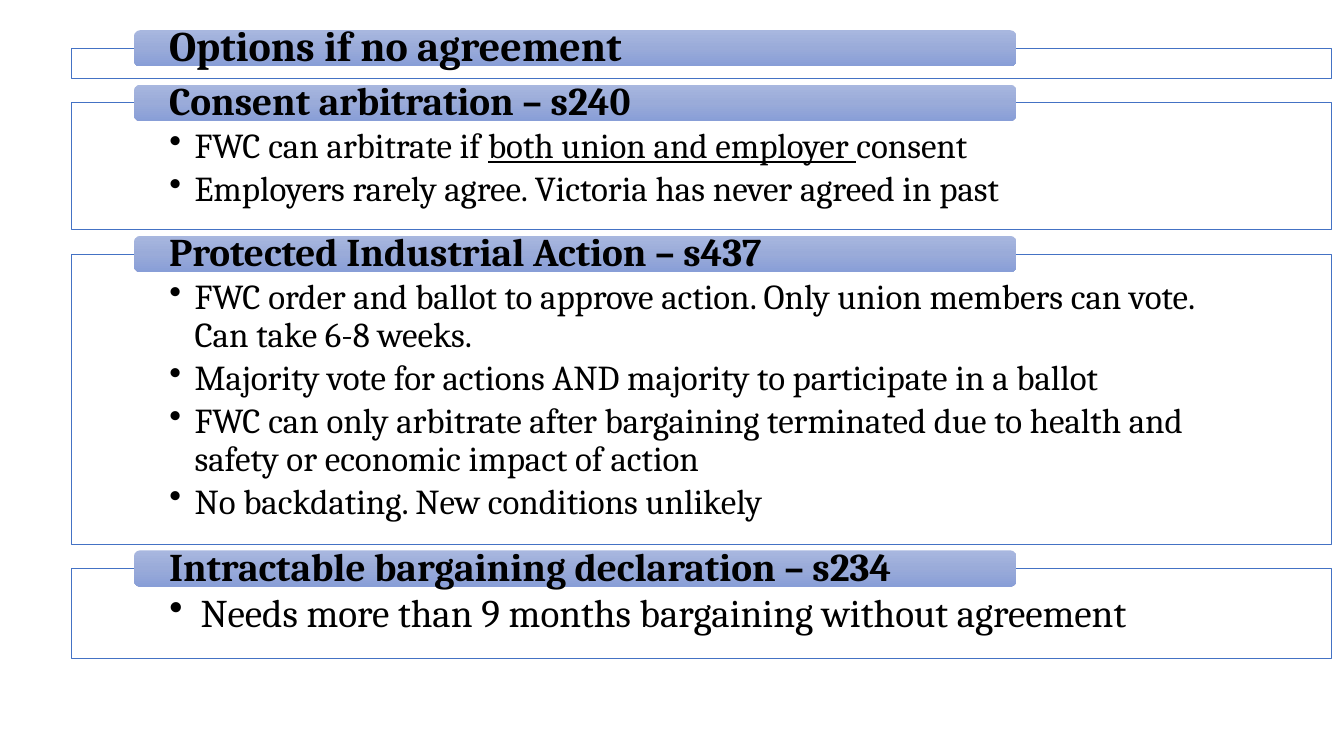
"""Build a slide that lists the options if bargaining reaches no agreement."""
from copy import deepcopy
from dataclasses import dataclass

from lxml import etree
from pptx import Presentation
from pptx.dml.color import RGBColor
from pptx.enum.shapes import MSO_SHAPE
from pptx.enum.text import MSO_ANCHOR, PP_ALIGN
from pptx.oxml.ns import qn
from pptx.util import Inches, Pt

RECTANGLE = MSO_SHAPE.RECTANGLE
ROUNDED = MSO_SHAPE.ROUNDED_RECTANGLE
TOP, MIDDLE = MSO_ANCHOR.TOP, MSO_ANCHOR.MIDDLE
LEFT = PP_ALIGN.LEFT

COLORS = {
    "panel": "FFFFFF",
    "outline": "4472C4",
    "tab_top": "A8B7DF",
    "tab_middle": "9AABD9",
    "tab_bottom": "889ED7",
    "text": "000000",
}
FONT = "Cambria"
FIRST_TOP, GAP = 0.48, 0.24
PANEL_LEFT, PANEL_WIDTH = 0.71, 12.49
TAB_LEFT, TAB_WIDTH, TAB_HEIGHT = 1.33, 8.75, 0.36


@dataclass
class Option:
    heading: str
    height: float
    points: tuple[str, ...] = ()
    heading_size: int = 28
    point_size: int = 25
    indent: float = 0.25


OPTIONS = (
    Option("Options if no agreement", 0.3, heading_size=30),
    Option("Consent arbitration – s240", 1.26, (
        "FWC can arbitrate if _both union and employer _consent",
        "Employers rarely agree. Victoria has never agreed in past",
    )),
    Option("Protected Industrial Action – s437", 2.88, (
        "FWC order and ballot to approve action. Only union members can vote. "
        "Can take 6-8 weeks.",
        "Majority vote for actions AND majority to participate in a ballot",
        "FWC can only arbitrate after bargaining terminated due to health and "
        "safety or economic impact of action",
        "No backdating. New conditions unlikely",
    )),
    Option("Intractable bargaining declaration – s234", 0.89, (
        "Needs more than 9 months bargaining without agreement",
    ), point_size=28, indent=0.31),
)


def rgb(name: str) -> RGBColor:
    return RGBColor.from_string(COLORS[name])


def add_box(slide, kind, left: float, top: float, width: float, height: float):
    box = slide.shapes.add_shape(
        kind, Inches(left), Inches(top), Inches(width), Inches(height))
    box.shadow.inherit = False
    return box


def write(box, lines: tuple[str, ...], *, size: int, margins: tuple[float, ...],
          anchor=TOP, bold: bool = False, indent: float = 0) -> None:
    frame = box.text_frame
    frame.word_wrap = True
    frame.vertical_anchor = anchor
    (frame.margin_left, frame.margin_top,
     frame.margin_right, frame.margin_bottom) = map(Inches, margins)
    for index, line in enumerate(lines):
        paragraph = frame.add_paragraph() if index else frame.paragraphs[0]
        if indent:
            properties = paragraph._p.get_or_add_pPr()
            properties.set("marL", str(Inches(indent)))
            properties.set("indent", str(-Inches(indent)))
            etree.SubElement(properties, qn("a:buChar")).set("char", "•")
            paragraph.space_after = Pt(size * 0.15)
        paragraph.alignment = LEFT
        paragraph.line_spacing = 0.9
        for part, words in enumerate(line.split("_")):
            run = paragraph.add_run()
            run.text = words
            run.font.name = FONT
            run.font.size = Pt(size)
            run.font.bold = bold
            run.font.underline = part % 2 == 1
            run.font.color.rgb = rgb("text")


def add_panel(slide, option: Option, top: float) -> None:
    panel = add_box(slide, RECTANGLE, PANEL_LEFT, top, PANEL_WIDTH, option.height)
    panel.fill.solid()
    panel.fill.fore_color.rgb = rgb("panel")
    white = panel._element.spPr.find(qn("a:solidFill"))[0]
    etree.SubElement(white, qn("a:alpha")).set("val", "90000")
    panel.line.color.rgb = rgb("outline")
    panel.line.width = Pt(0.5)
    if option.points:
        write(panel, option.points, size=option.point_size,
              margins=(0.97, 0.25, 0.97, 0.19), indent=option.indent)


def add_tab(slide, option: Option, top: float) -> None:
    tab = add_box(slide, ROUNDED, TAB_LEFT, top, TAB_WIDTH, TAB_HEIGHT)
    tab.line.fill.background()
    tab.fill.gradient()
    tab.fill.gradient_angle = 270
    first_stop = next(tab._element.spPr.iter(qn("a:gs")))
    middle_stop = deepcopy(first_stop)
    first_stop.addnext(middle_stop)
    stops = zip(tab.fill.gradient_stops, ("tab_top", "tab_middle", "tab_bottom"))
    for index, (stop, name) in enumerate(stops):
        stop.position = index / 2
        stop.color.rgb = rgb(name)
    write(tab, (option.heading,), size=option.heading_size,
          margins=(0.33, 0, 0.33, 0), anchor=MIDDLE, bold=True)


def main() -> None:
    deck = Presentation()
    deck.slide_width, deck.slide_height = Inches(13.33), Inches(7.5)
    slide = deck.slides.add_slide(deck.slide_layouts[6])
    top = FIRST_TOP
    for option in OPTIONS:
        add_panel(slide, option, top)
        add_tab(slide, option, top - TAB_HEIGHT / 2)
        top += option.height + GAP
    deck.save("out.pptx")


if __name__ == "__main__":
    main()
